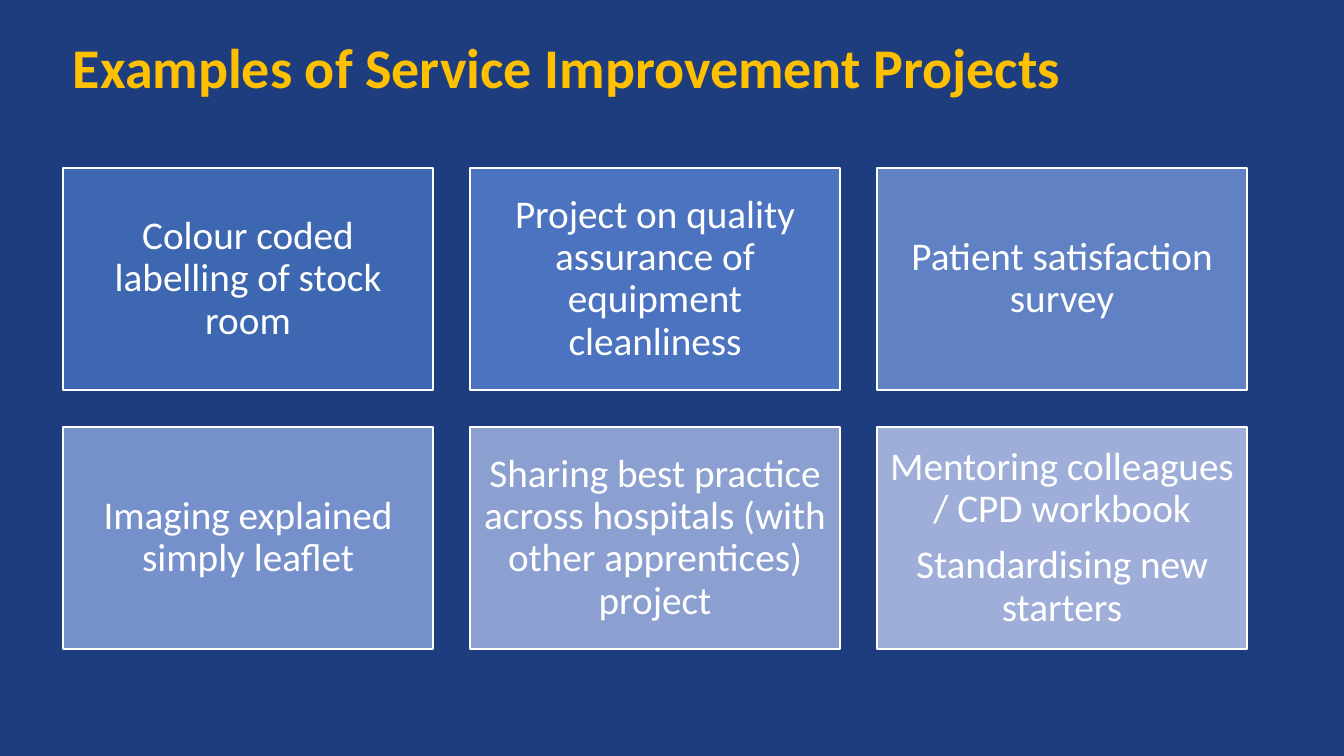
from pptx import Presentation
from pptx.dml.color import RGBColor
from pptx.enum.shapes import MSO_SHAPE
from pptx.enum.text import MSO_ANCHOR, PP_ALIGN
from pptx.util import Pt

RECTANGLE = MSO_SHAPE.RECTANGLE
MIDDLE = MSO_ANCHOR.MIDDLE
LEFT, CENTER = PP_ALIGN.LEFT, PP_ALIGN.CENTER

NAVY = RGBColor(0x1E, 0x3D, 0x7F)
GOLD = RGBColor(0xFF, 0xC0, 0x00)
WHITE = RGBColor(0xFF, 0xFF, 0xFF)
BLUE_1 = RGBColor(0x3E, 0x67, 0xB2)
BLUE_2 = RGBColor(0x4C, 0x73, 0xBF)
BLUE_3 = RGBColor(0x61, 0x81, 0xC5)
BLUE_4 = RGBColor(0x76, 0x90, 0xCB)
BLUE_5 = RGBColor(0x8B, 0x9F, 0xD1)
BLUE_6 = RGBColor(0x9F, 0xAE, 0xD8)

SLIDE_WIDTH, SLIDE_HEIGHT = 1344, 756
EMU_PER_PX = 12192000 / SLIDE_WIDTH

PROJECTS = [
    (BLUE_1, ["Colour coded labelling of stock room"]),
    (BLUE_2, ["Project on quality assurance of equipment cleanliness"]),
    (BLUE_3, ["Patient satisfaction survey"]),
    (BLUE_4, ["Imaging explained simply leaflet"]),
    (BLUE_5, ["Sharing best practice across hospitals (with other apprentices) project"]),
    (BLUE_6, ["Mentoring colleagues / CPD workbook", "Standardising new starters"]),
]
COLUMNS = 3
GRID_LEFT, GRID_TOP = 63, 168
CARD_WIDTH, CARD_HEIGHT, GAP = 370, 222, 37


def px(*lengths):
    return [round(length * EMU_PER_PX) for length in lengths]


def write_text(frame, lines, size, color, font, bold=False, align=LEFT, space_after=0):
    frame.word_wrap = True
    frame.vertical_anchor = MIDDLE
    for index, line in enumerate(lines):
        paragraph = frame.paragraphs[0] if index == 0 else frame.add_paragraph()
        paragraph.alignment = align
        paragraph.line_spacing = 0.9
        paragraph.space_after = Pt(space_after)
        run = paragraph.add_run()
        run.text = line
        run.font.name = font
        run.font.size = Pt(size)
        run.font.bold = bold
        run.font.color.rgb = color


class SlideBuilder:
    font = "Calibri"
    title_size = 40
    card_size = 28
    card_inset = 12

    def __init__(self, presentation):
        self.slide = presentation.slides.add_slide(presentation.slide_layouts[6])

    def background(self, color):
        fill = self.slide.background.fill
        fill.solid()
        fill.fore_color.rgb = color

    def title(self, text, left, top, width, height):
        heading = self.slide.shapes.add_textbox(*px(left, top, width, height))
        write_text(heading.text_frame, [text], size=self.title_size, color=GOLD,
                   font=self.font, bold=True)

    def card(self, lines, color, left, top, width, height):
        card = self.slide.shapes.add_shape(RECTANGLE, *px(left, top, width, height))
        card.shadow.inherit = False
        card.fill.solid()
        card.fill.fore_color.rgb = color
        card.line.color.rgb = WHITE
        card.line.width = Pt(1)
        frame = card.text_frame
        (frame.margin_left, frame.margin_top,
         frame.margin_right, frame.margin_bottom) = px(*[self.card_inset] * 4)
        write_text(frame, lines, size=self.card_size, color=WHITE, font=self.font,
                   align=CENTER, space_after=self.card_size * 0.35)


def main():
    presentation = Presentation()
    presentation.slide_width, presentation.slide_height = px(SLIDE_WIDTH, SLIDE_HEIGHT)
    builder = SlideBuilder(presentation)
    builder.background(NAVY)
    builder.title("Examples of Service Improvement Projects", 63, -3, 1164, 146)
    for index, (color, lines) in enumerate(PROJECTS):
        row, column = divmod(index, COLUMNS)
        builder.card(lines, color,
                     GRID_LEFT + column * (CARD_WIDTH + GAP),
                     GRID_TOP + row * (CARD_HEIGHT + GAP),
                     CARD_WIDTH, CARD_HEIGHT)
    presentation.save("out.pptx")


if __name__ == "__main__":
    main()
